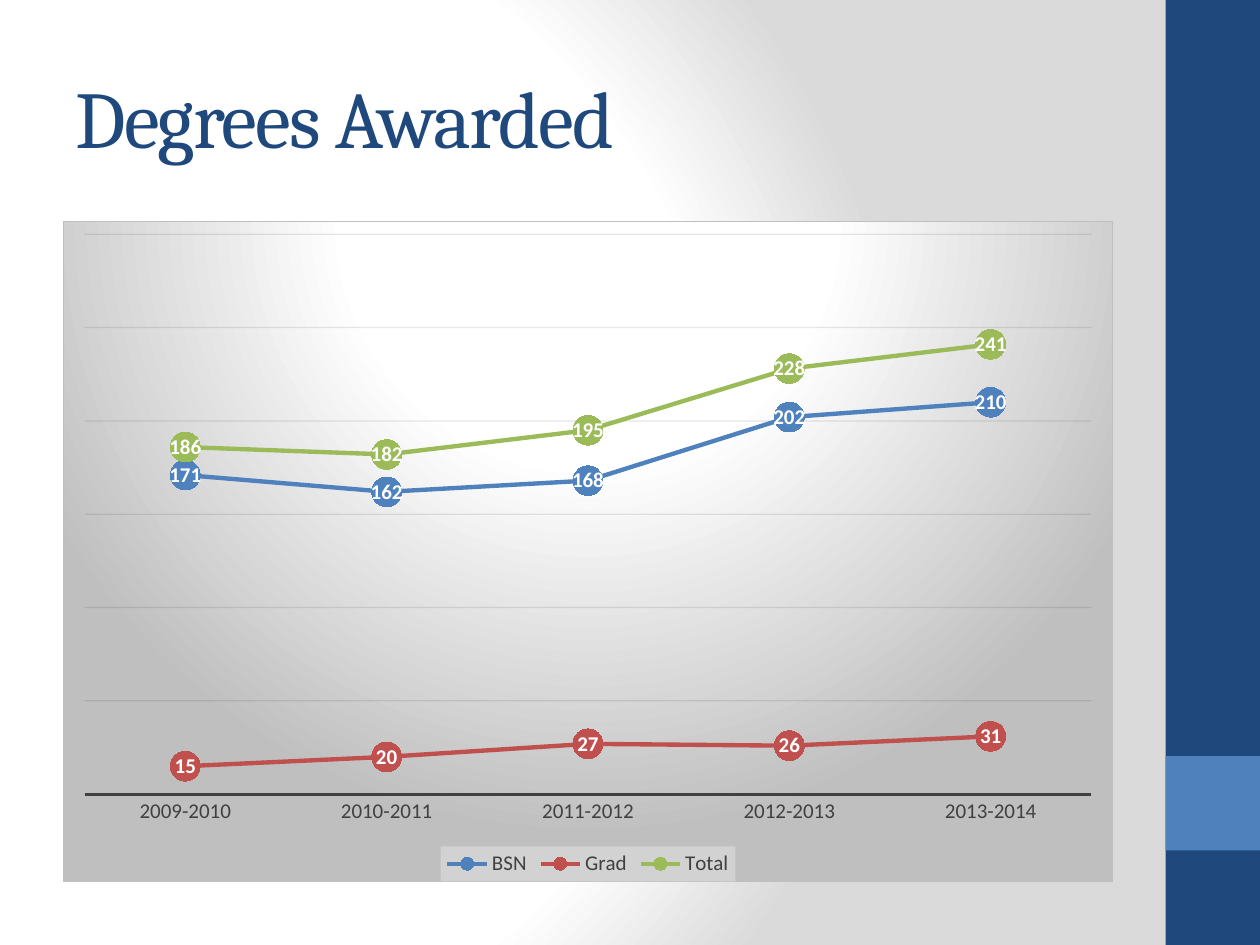
from pptx import Presentation
from pptx.chart.data import CategoryChartData
from pptx.dml.color import RGBColor
from pptx.enum.chart import (XL_CHART_TYPE, XL_LABEL_POSITION, XL_LEGEND_POSITION,
                             XL_MARKER_STYLE, XL_TICK_LABEL_POSITION, XL_TICK_MARK)
from pptx.enum.shapes import MSO_SHAPE
from pptx.enum.text import MSO_ANCHOR, PP_ALIGN
from pptx.oxml import parse_xml
from pptx.oxml.ns import nsdecls
from pptx.util import Pt

NAVY, BLUE, RED, GREEN = "1F497D", "4F81BD", "C0504D", "9BBB59"
WHITE, GRAY, DARK = "FFFFFF", "BFBFBF", "404040"


def rgb(value):
    return RGBColor.from_string(value)


def gradient(stops, sides):
    gs = "".join(f'<a:gs pos="{pos * 1000}"><a:srgbClr val="{color}"/></a:gs>'
                 for pos, color in stops)
    rect = " ".join(f'{side}="{value * 1000}"' for side, value in zip("ltrb", sides))
    return (f'<a:gradFill {nsdecls("a")} rotWithShape="1"><a:gsLst>{gs}</a:gsLst>'
            f'<a:path path="circle"><a:fillToRect {rect}/></a:path></a:gradFill>')


def chart_format(content):
    return parse_xml(f'<c:spPr {nsdecls("c", "a")}>{content}</c:spPr>')


def set_font(font, size, color, name="Calibri", bold=False):
    font.size, font.name, font.bold = Pt(size), name, bold
    font.color.rgb = rgb(color)


class Deck:
    """Holds the style and the current slide."""

    def __init__(self, prs):
        self.s = prs.slides.add_slide(prs.slide_layouts[5])

    def background(self, stops, sides):
        self.s.background.fill.solid()
        fill = self.s.element.xpath(".//p:bgPr/a:solidFill")[0]
        fill.getparent().replace(fill, parse_xml(gradient(stops, sides)))

    def rect(self, x, y, w, h, color):
        sp = self.s.shapes.add_shape(MSO_SHAPE.RECTANGLE, Pt(x), Pt(y), Pt(w), Pt(h))
        sp.shadow.inherit = False
        sp.fill.solid()
        sp.fill.fore_color.rgb = rgb(color)
        sp.line.fill.background()

    def title(self, text, x, y, w, h):
        sp = self.s.shapes.title
        sp.left, sp.top, sp.width, sp.height = Pt(x), Pt(y), Pt(w), Pt(h)
        tf = sp.text_frame
        tf.text = text
        tf.vertical_anchor = MSO_ANCHOR.MIDDLE
        p = tf.paragraphs[0]
        p.alignment = PP_ALIGN.LEFT
        set_font(p.font, 46, NAVY, "Cambria")
        p.runs[0].font._element.set("spc", "-100")

    def line_chart(self, x, y, w, h, categories, series):
        data = CategoryChartData()
        data.categories = categories
        for name, values, _ in series:
            data.add_series(name, values)
        chart = self.s.shapes.add_chart(XL_CHART_TYPE.LINE_MARKERS, Pt(x), Pt(y),
                                        Pt(w), Pt(h), data).chart
        chart.has_title = False
        set_font(chart.font, 10, "000000")
        fill = gradient([(0, WHITE), (39, WHITE), (100, GRAY)], (50, -80, 50, 180))
        border = f'<a:ln w="9525"><a:solidFill><a:srgbClr val="{GRAY}"/></a:solidFill></a:ln>'
        chart.element.xpath("c:chart")[0].addnext(chart_format(fill + border))
        self.axes(chart)
        self.legend(chart)
        for ser, (_, _, color) in zip(chart.plots[0].series, series):
            self.series(ser, color)

    def axes(self, chart):
        cat, val = chart.category_axis, chart.value_axis
        cat.major_tick_mark = cat.minor_tick_mark = XL_TICK_MARK.NONE
        cat.tick_label_position = XL_TICK_LABEL_POSITION.NEXT_TO_AXIS
        set_font(cat.tick_labels.font, 12, DARK)
        cat.format.line.width = Pt(1.5)
        cat.format.line.color.rgb = rgb(DARK)
        val.visible = False
        val.minimum_scale, val.maximum_scale, val.major_unit = 0, 300, 50
        line = val.major_gridlines.format.line
        line.width = Pt(0.75)
        line.color.rgb = rgb("0D0D0D")
        color = val.major_gridlines._xAx.xpath("c:majorGridlines//a:srgbClr")[0]
        color.append(parse_xml(f'<a:alpha {nsdecls("a")} val="10000"/>'))

    def legend(self, chart):
        chart.has_legend = True
        legend = chart.legend
        legend.position = XL_LEGEND_POSITION.BOTTOM
        legend.include_in_layout = False
        set_font(legend.font, 12, DARK)
        fill = ('<a:solidFill><a:srgbClr val="F2F2F2"><a:alpha val="39000"/>'
                '</a:srgbClr></a:solidFill>')
        overlay = chart.element.xpath(".//c:legend/c:overlay")[0]
        overlay.addnext(chart_format(fill))

    def series(self, ser, color):
        ser.smooth = False
        ser.format.line.width = Pt(2.5)
        ser.format.line.color.rgb = rgb(color)
        marker = ser.marker
        marker.style, marker.size = XL_MARKER_STYLE.CIRCLE, 17
        marker.format.fill.solid()
        marker.format.fill.fore_color.rgb = rgb(color)
        marker.format.line.fill.background()
        labels = ser.data_labels
        labels.show_value = True
        labels.position = XL_LABEL_POSITION.CENTER
        set_font(labels.font, 12, WHITE, bold=True)


def main():
    prs = Presentation()
    prs.slide_width, prs.slide_height = Pt(720), Pt(540)
    deck = Deck(prs)
    deck.background([(0, WHITE), (75, WHITE), (100, "DADADA")], (20, 50, 100, 50))
    deck.rect(666, 0, 54, 540, NAVY)
    deck.rect(666, 432, 54, 54, BLUE)
    deck.title("Degrees Awarded", 36, 21.6, 600, 90)
    deck.line_chart(36, 126, 600, 378,
                    ["2009-2010", "2010-2011", "2011-2012", "2012-2013", "2013-2014"],
                    [("BSN", (171, 162, 168, 202, 210), BLUE),
                     ("Grad", (15, 20, 27, 26, 31), RED),
                     ("Total", (186, 182, 195, 228, 241), GREEN)])
    prs.save("out.pptx")


if __name__ == "__main__":
    main()
